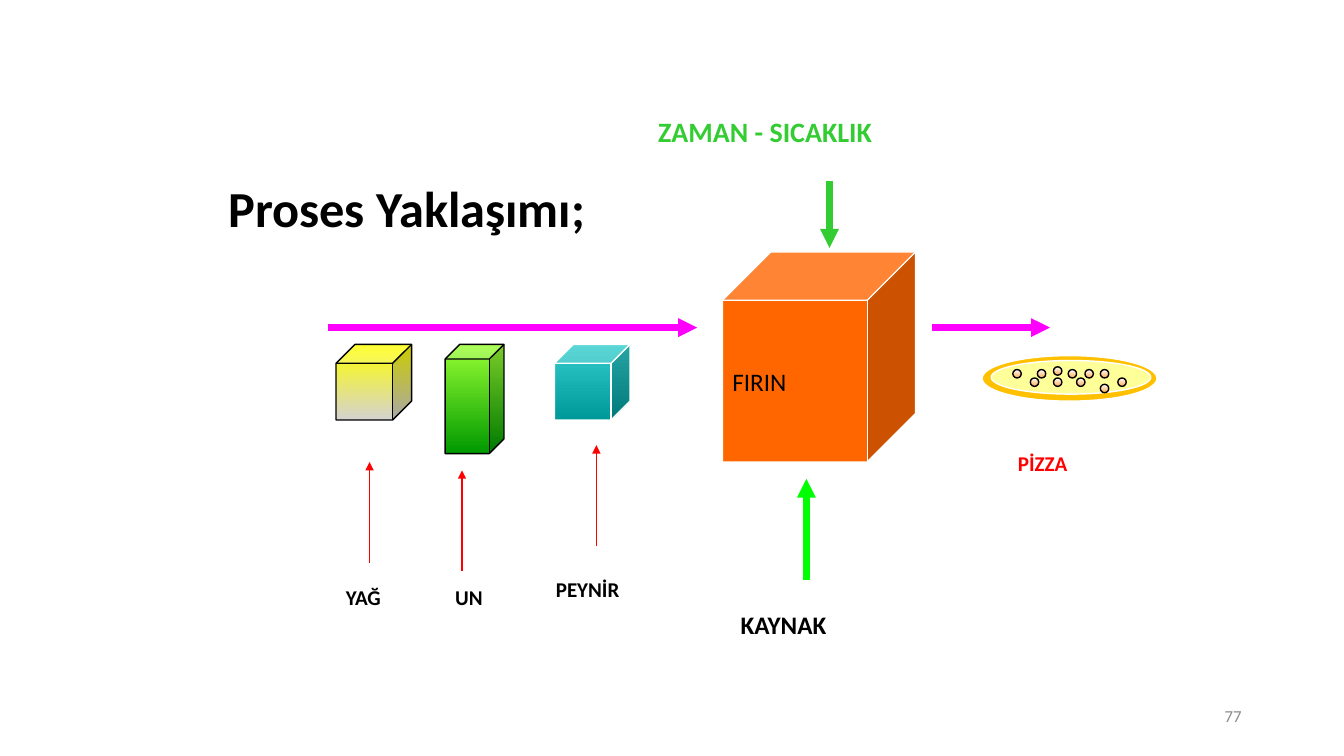
"""Build the process approach slide about baking a pizza."""
import pptx
import pptx.dml.color
import pptx.enum.shapes
import pptx.enum.text
import pptx.oxml
import pptx.oxml.ns
import pptx.util

Pt = pptx.util.Pt
SHAPES = pptx.enum.shapes.MSO_SHAPE
ALIGN = pptx.enum.text.PP_ALIGN
ANCHOR = pptx.enum.text.MSO_ANCHOR
COLOURS = {
    "black": "000000", "white": "FFFFFF", "grey": "8C8C8C", "red": "FF0000",
    "magenta": "FF00FF", "green": "33CC33", "lime": "00FF00", "oven": "FF6600",
    "crust": "FFC000", "cheese": "FFFF99", "topping": "FFAC57",
    "oil_top": "FFFF00", "oil_base": "D4D2D0",
    "flour_top": "99FF33", "flour_base": "009900",
    "cube_top": "33CCCC", "cube_base": "009999",
}


def colour(name):
    return pptx.dml.color.RGBColor.from_string(COLOURS[name])


def write(shape, text, size=15, ink="black", bold=True, align=ALIGN.LEFT,
          anchor=ANCHOR.TOP, wrap=True, spacing=None):
    frame = shape.text_frame
    frame.word_wrap = wrap
    frame.vertical_anchor = anchor
    frame.auto_size = pptx.enum.text.MSO_AUTO_SIZE.NONE
    paragraph = frame.paragraphs[0]
    paragraph.alignment = align
    paragraph.line_spacing = spacing
    run = paragraph.add_run()
    run.text = text
    run.font.name = "Calibri"
    run.font.size = Pt(size)
    run.font.bold = bold
    run.font.color.rgb = colour(ink)


class ProcessSlide:
    def __init__(self, presentation):
        self.slide = presentation.slides.add_slide(presentation.slide_layouts[5])

    def title(self, text, left, top, width, height):
        title = self.slide.shapes.title
        title.left, title.top = Pt(left), Pt(top)
        title.width, title.height = Pt(width), Pt(height)
        write(title, text, size=36, spacing=0.8)

    def label(self, text, left, top, width, height=25, **style):
        box = self.slide.shapes.add_textbox(Pt(left), Pt(top), Pt(width), Pt(height))
        write(box, text, **style)

    def solid(self, kind, left, top, width, height, fill, line="white", parent=None):
        shapes = (parent or self.slide).shapes
        shape = shapes.add_shape(kind, Pt(left), Pt(top), Pt(width), Pt(height))
        shape.shadow.inherit = False
        if len(fill) == 1:
            shape.fill.solid()
            shape.fill.fore_color.rgb = colour(fill[0])
        else:
            shape.fill.gradient()
            shape.fill.gradient_angle = 270
            for stop, name in zip(shape.fill.gradient_stops, fill):
                stop.color.rgb = colour(name)
        shape.line.color.rgb = colour(line)
        shape.line.width = Pt(1)
        return shape

    def arrow(self, start_x, start_y, end_x, end_y, ink, width=4.5):
        arrow = self.slide.shapes.add_connector(
            pptx.enum.shapes.MSO_CONNECTOR.STRAIGHT,
            Pt(start_x), Pt(start_y), Pt(end_x), Pt(end_y))
        arrow.line.color.rgb = colour(ink)
        arrow.line.width = Pt(width)
        head = pptx.oxml.parse_xml(
            f'<a:tailEnd {pptx.oxml.ns.nsdecls("a")} type="triangle"/>')
        arrow.line._get_or_add_ln().append(head)
        effects = pptx.oxml.parse_xml(f'<a:effectLst {pptx.oxml.ns.nsdecls("a")}/>')
        arrow._element.spPr.append(effects)

    def pizza(self, toppings):
        group = self.slide.shapes.add_group_shape()
        self.solid(SHAPES.OVAL, 701.5, 254, 125, 32.5, ["crust"], parent=group)
        self.solid(SHAPES.OVAL, 708, 257.5, 114, 24, ["cheese"], parent=group)
        for left, top in toppings:
            self.solid(SHAPES.OVAL, left, top, 6, 6, ["white", "topping"],
                       line="black", parent=group)


def main():
    presentation = pptx.Presentation()
    presentation.slide_width, presentation.slide_height = Pt(960), Pt(540)
    page = ProcessSlide(presentation)
    page.title("Proses Yaklaşımı;", 156, 131, 304, 56)

    for left, width, height, fill, line in [
        (240, 54, 54, ["oil_top", "oil_base"], "black"),
        (318, 42, 78, ["flour_top", "flour_base"], "black"),
        (396, 54, 54, ["cube_top", "cube_base"], "white"),
    ]:
        page.solid(SHAPES.CUBE, left, 246, width, height, fill, line)
    oven = page.solid(SHAPES.CUBE, 516, 180, 138, 150, ["oven"])
    write(oven, "FIRIN", size=18, bold=False, anchor=ANCHOR.MIDDLE, wrap=False)

    page.arrow(234, 234, 498, 234, "magenta")
    page.arrow(666, 234, 750, 234, "magenta")
    page.arrow(592.5, 129.5, 592.5, 177, "green")
    page.arrow(576, 414, 576, 342, "lime")
    for x, bottom in [(264, 402), (330, 408), (426, 390)]:
        page.arrow(x, bottom, x, bottom - 72, "red", width=1)

    page.label("ZAMAN - SICAKLIK", 463, 78.5, 240, 32, size=20, ink="green")
    page.label("PİZZA", 720, 318, 90, ink="red")
    page.label("KAYNAK", 522, 432, 150, 30, size=18)
    page.label("PEYNİR", 390, 408, 72)
    page.label("UN", 318, 414, 66)
    page.label("YAĞ", 240, 414, 54)
    page.label("77", 678, 500.5, 216, 29, size=12, ink="grey", bold=False,
               align=ALIGN.RIGHT)

    rows = {262: [752.5], 264: [723.5, 741, 763, 775, 786],
            270: [736, 752.5, 769, 798.5], 274.5: [786]}
    page.pizza([(left, top) for top, lefts in rows.items() for left in lefts])
    presentation.save("out.pptx")


if __name__ == "__main__":
    main()
